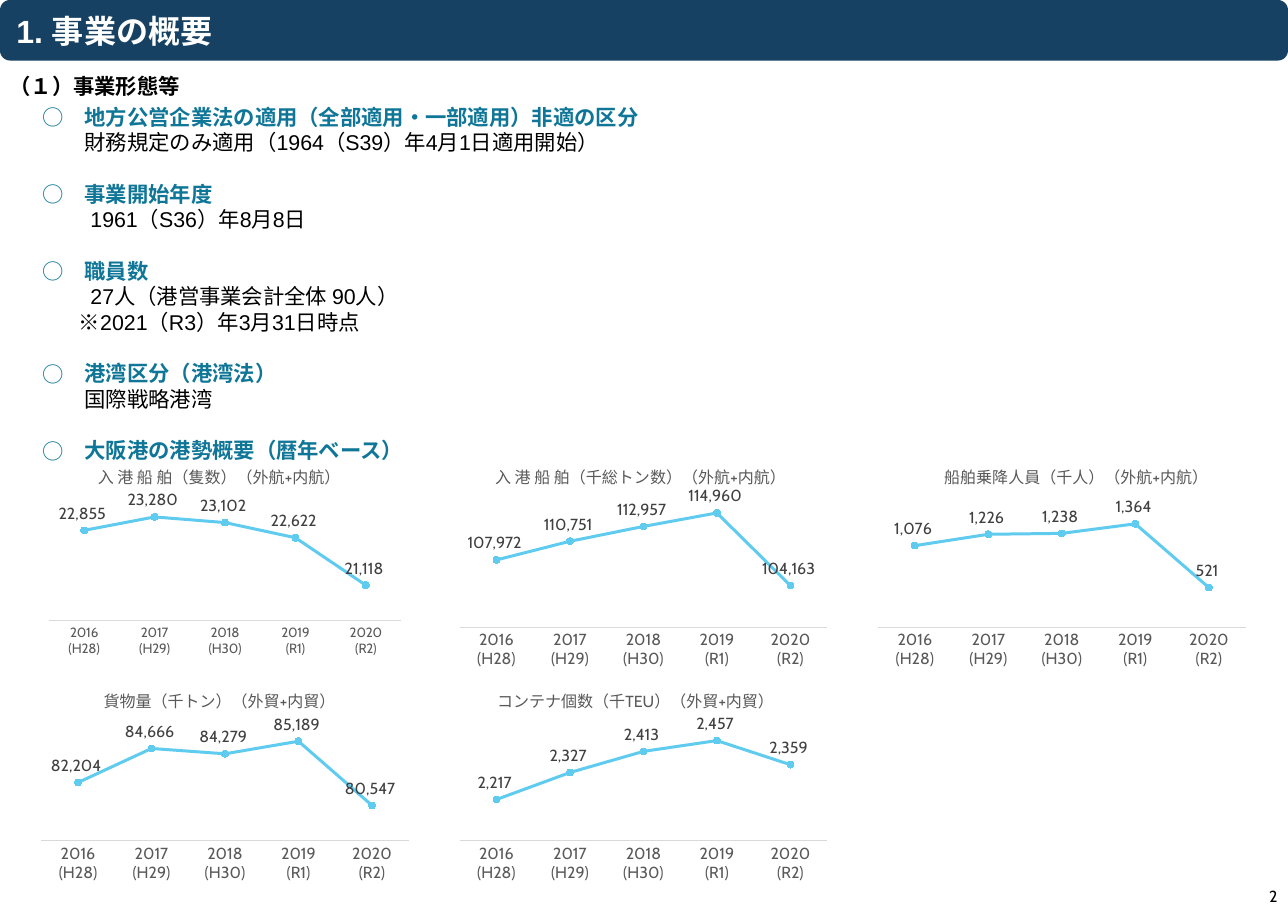
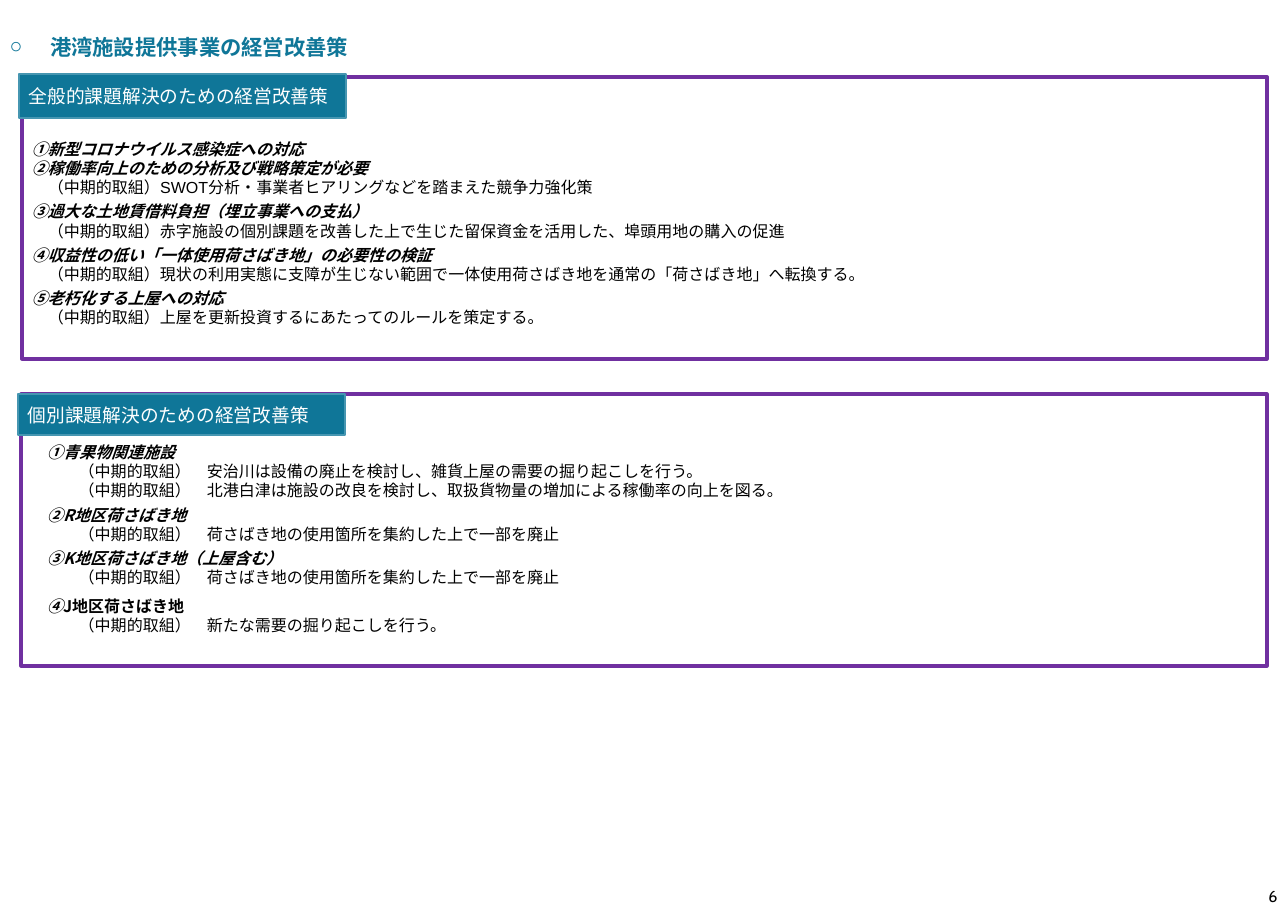
from dataclasses import dataclass

from lxml.etree import SubElement
from pptx import Presentation
from pptx.chart.data import CategoryChartData
from pptx.dml.color import RGBColor
from pptx.enum.chart import XL_CHART_TYPE as ChartType
from pptx.enum.chart import XL_LABEL_POSITION as LabelPosition
from pptx.enum.chart import XL_MARKER_STYLE as MarkerStyle
from pptx.enum.chart import XL_TICK_MARK as TickMark
from pptx.enum.shapes import MSO_SHAPE as Preset
from pptx.enum.text import MSO_ANCHOR as Anchor
from pptx.enum.text import MSO_AUTO_SIZE as AutoSize
from pptx.enum.text import PP_ALIGN as Align
from pptx.oxml import parse_xml
from pptx.oxml.ns import nsdecls, qn
from pptx.util import Inches, Pt

WIDTH, HEIGHT = 13.39, 9.45
NAVY, TEAL, TEAL_EDGE, PURPLE = "174162", "0F7698", "4696B1", "7030A0"
SKY, GREY, DARK_GREY, PALE_GREY = "5FCBEF", "595959", "404040", "D9D9D9"
BLACK, WHITE = "000000", "FFFFFF"
LATIN, BODY, JAPANESE = "Arial", "Cabin", "Noto Sans CJK JP"
NUMBER_FORMAT = r"#,##0_);[Red]\(#,##0\)"
YEARS = ["2016\n(H28)", "2017\n(H29)", "2018\n(H30)", "2019\n(R1)", "2020\n(R2)"]


@dataclass
class Box:
    """A region in inches."""
    left: float
    top: float
    width: float
    height: float

    def emu(self):
        return [Inches(n) for n in (self.left, self.top, self.width, self.height)]


TITLE_BAND = Box(0, 0, WIDTH, HEIGHT / 15)
PAGE_NUMBER = Box(WIDTH - 0.76, HEIGHT - 0.27, 0.75, 0.27)
CHART_COLUMNS = [0.35 + 4.35 * column for column in range(3)]
CHART_ROWS = [4.77, 7.1]
CHART_WIDTH = 3.98
CHART_TITLE_TOP = 0.005

FACTS = [  # heading, then (indent, mark, text) for each line below it
    ("地方公営企業法の適用（全部適用・一部適用）非適の区分",
     [(0.44, "", "財務規定のみ適用（1964（S39）年4月1日適用開始）")]),
    ("事業開始年度", [(0.5, "", "1961（S36）年8月8日")]),
    ("職員数", [(0.5, "", "27人（港営事業会計全体 90人）"),
              (0.38, "※", "2021（R3）年3月31日時点")]),
    ("港湾区分（港湾法）", [(0.44, "", "国際戦略港湾")]),
    ("大阪港の港勢概要（暦年ベース）", []),
]

CHARTS = [  # column, row, title, left share of the title, axis range, values
    (0, 0, "入 港 船 舶（隻数）（外航+内航）", 0.16, (20000, 23500),
     (22855, 23280, 23102, 22622, 21118)),
    (1, 0, "入 港 船 舶（千総トン数）（外航+内航）", 0.105, (98000, 116000),
     (107972, 110751, 112957, 114960, 104163)),
    (0, 1, "貨物量（千トン）（外貿+内貿）", 0.175, (78000, 86000),
     (82204, 84666, 84279, 85189, 80547)),
    (1, 1, "コンテナ個数（千TEU）（外貿+内貿）", 0.11, (2050, 2500),
     (2217, 2327, 2413, 2457, 2359)),
    (2, 0, "船舶乗降人員（千人）（外航+内航）", 0.185, (0, 1600),
     (1076, 1226, 1238, 1364, 521)),
]

MID_TERM = "（中期的取組）"
GENERAL_MEASURES = [  # gap above, marker, heading, heading is italic, details
    (0, "①", "新型コロナウイルス感染症への対応", True, []),
    (0, "②", "稼働率向上のための分析及び戦略策定が必要", True,
     ["SWOT分析・事業者ヒアリングなどを踏まえた競争力強化策"]),
    (3.6, "③", "過大な土地賃借料負担（埋立事業への支払）", True,
     ["赤字施設の個別課題を改善した上で生じた留保資金を活用した、埠頭用地の購入の促進"]),
    (3.6, "④", "収益性の低い「一体使用荷さばき地」の必要性の検証", True,
     ["現状の利用実態に支障が生じない範囲で一体使用荷さばき地を通常の「荷さばき地」へ転換する。"]),
    (3.6, "⑤", "老朽化する上屋への対応", True,
     ["上屋を更新投資するにあたってのルールを策定する。"]),
]
SITE_MEASURES = [
    (0, "①", "青果物関連施設", True,
     ["　安治川は設備の廃止を検討し、雑貨上屋の需要の掘り起こしを行う。",
      "　北港白津は施設の改良を検討し、取扱貨物量の増加による稼働率の向上を図る。"]),
    (3.6, "②", "R地区荷さばき地", True, ["　荷さばき地の使用箇所を集約した上で一部を廃止"]),
    (3.6, "③", "K地区荷さばき地（上屋含む）", True,
     ["　荷さばき地の使用箇所を集約した上で一部を廃止"]),
    (7.2, "④", "J地区荷さばき地", False, ["　新たな需要の掘り起こしを行う。"]),
]


def color(hex_text):
    return RGBColor.from_string(hex_text)


def style_font(font, size, hex_text, name=BODY, bold=False, italic=False):
    font.size, font.name = Pt(size), name
    font.bold, font.italic = bold, italic
    font.color.rgb = color(hex_text)


def add_run(paragraph, text, size, hex_text=BLACK, name=BODY, bold=False, italic=False):
    run = paragraph.add_run()
    run.text = text
    style_font(run.font, size, hex_text, name, bold, italic)
    SubElement(run.font._element, qn("a:ea")).set("typeface", JAPANESE)


def set_up_frame(shape, anchor=Anchor.TOP, left=0.1, top=0.05):
    """Wrap the text, fix the frame and return its first paragraph."""
    frame = shape.text_frame
    frame.word_wrap, frame.auto_size = True, AutoSize.NONE
    frame.vertical_anchor = anchor
    frame.margin_left = frame.margin_right = Inches(left)
    frame.margin_top, frame.margin_bottom = Inches(top), Inches(0.05)
    return frame.paragraphs[0]


def set_up_paragraph(paragraph, size, align=Align.LEFT, gap=0, indent=0, bullet_font=None):
    """Set a line 1.2 times the text size, with a hanging circle bullet if asked."""
    paragraph.alignment = align
    paragraph.line_spacing = Pt(size * 1.2)
    paragraph.space_before, paragraph.space_after = Pt(gap), Pt(0)
    properties = paragraph._p.get_or_add_pPr()
    properties.set("marL", str(Inches(indent)))
    properties.set("indent", str(-Inches(indent) if bullet_font else 0))
    if bullet_font:
        SubElement(properties, qn("a:buFont")).set("typeface", bullet_font)
        SubElement(properties, qn("a:buChar")).set("char", "○")
    else:
        SubElement(properties, qn("a:buNone"))


def paragraphs_of(frame):
    """Yield the first paragraph, then new ones."""
    yield frame.paragraphs[0]
    while True:
        yield frame.add_paragraph()


def move(shape, box):
    shape.left, shape.top, shape.width, shape.height = box.emu()


def add_block(slide, box, preset=Preset.RECTANGLE, fill=None, line=None, line_width=0):
    shape = slide.shapes.add_shape(preset, *box.emu())
    shape.shadow.inherit = False
    if fill:
        shape.fill.solid()
        shape.fill.fore_color.rgb = color(fill)
    else:
        shape.fill.background()
    if line:
        shape.line.color.rgb = color(line)
        shape.line.width = Pt(line_width)
    else:
        shape.line.fill.background()
    return shape


def add_text(slide, box, text, size, align=Align.LEFT, bold=False, anchor=Anchor.TOP):
    paragraph = set_up_frame(slide.shapes.add_textbox(*box.emu()), anchor)
    set_up_paragraph(paragraph, size, align)
    add_run(paragraph, text, size, bold=bold)


def add_page_number(slide, number):
    add_text(slide, PAGE_NUMBER, number, 12, Align.RIGHT, anchor=Anchor.MIDDLE)


def add_title_band(slide, text):
    """Draw the rounded band and bring the title in front of it."""
    band = add_block(slide, TITLE_BAND, Preset.ROUNDED_RECTANGLE, NAVY)
    title = slide.shapes.title
    band._element.addnext(title._element)
    move(title, TITLE_BAND)
    paragraph = set_up_frame(title, Anchor.MIDDLE, left=0.17)
    set_up_paragraph(paragraph, 24)
    add_run(paragraph, text, 24, WHITE, LATIN, bold=True)


def format_fact_list(body, box):
    move(body, box)
    set_up_frame(body)
    paragraphs = paragraphs_of(body.text_frame)
    for index, (heading, details) in enumerate(FACTS):
        paragraph = next(paragraphs)
        set_up_paragraph(paragraph, 16, gap=19.2 if index else 0, indent=0.44,
                         bullet_font=JAPANESE)
        add_run(paragraph, heading, 16, TEAL, bold=True)
        for indent, mark, text in details:
            paragraph = next(paragraphs)
            set_up_paragraph(paragraph, 16, indent=indent)
            if mark:
                add_run(paragraph, mark, 16, name=JAPANESE)
            add_run(paragraph, text, 16, name=LATIN)


def set_layout(parent, position, **shares):
    """Fix a chart part at shares (x, y, w, h) of the chart's size."""
    for old in parent.findall(qn("c:layout")):
        parent.remove(old)
    layout = parse_xml(f'<c:layout {nsdecls("c")}><c:manualLayout/></c:layout>')
    manual = layout[0]
    if "w" in shares:
        SubElement(manual, qn("c:layoutTarget")).set("val", "inner")
    for axis in "xy":
        SubElement(manual, qn(f"c:{axis}Mode")).set("val", "edge")
    for key, share in shares.items():
        SubElement(manual, qn(f"c:{key}")).set("val", f"{share:.3f}")
    parent.insert(position, layout)


def add_line_chart(slide, box, title, title_left, limits, values, label_size, plot):
    data = CategoryChartData(number_format=NUMBER_FORMAT)
    data.categories = YEARS
    data.add_series("Series 1", values)
    chart = slide.shapes.add_chart(ChartType.LINE_MARKERS, *box.emu(), data).chart
    style_font(chart.font, 10, BLACK)
    chart.has_legend = False

    chart.has_title = True
    run = chart.chart_title.text_frame.paragraphs[0].add_run()
    run.text = title
    style_font(run.font, 12, GREY)
    chart.chart_title.include_in_layout = False
    set_layout(chart.chart_title._element, 1, x=title_left, y=CHART_TITLE_TOP)
    set_layout(chart._chartSpace.chart.plotArea, 0, **plot)

    years = chart.category_axis
    years.major_tick_mark = years.minor_tick_mark = TickMark.NONE
    style_font(years.tick_labels.font, label_size, GREY)
    years.format.line.color.rgb = color(PALE_GREY)
    years.format.line.width = Pt(0.75)
    amounts = chart.value_axis
    amounts.visible = amounts.has_major_gridlines = False
    amounts.minimum_scale, amounts.maximum_scale = limits

    chart.plots[0].vary_by_categories = False
    series = chart.plots[0].series[0]
    series.smooth = False
    series.format.line.color.rgb = color(SKY)
    series.format.line.width = Pt(2.25)
    series.marker.style, series.marker.size = MarkerStyle.CIRCLE, 5
    series.marker.format.fill.solid()
    series.marker.format.fill.fore_color.rgb = color(SKY)
    series.marker.format.line.color.rgb = color(SKY)
    labels = series.data_labels
    labels.show_value, labels.position = True, LabelPosition.ABOVE
    labels.number_format, labels.number_format_is_linked = NUMBER_FORMAT, False
    style_font(labels.font, 12, DARK_GREY)


def add_chart_grid(slide):
    for column, row, *content in CHARTS:
        first = column == row == 0
        height = 2.24 if row == 0 and not first else 2.13
        margin = 0.49 / height
        plot = (dict(x=0.04, y=0.25, w=0.92, h=0.54) if first
                else dict(x=0.02, y=margin, w=0.96, h=1 - 2 * margin))
        box = Box(CHART_COLUMNS[column], CHART_ROWS[row], CHART_WIDTH, height)
        add_line_chart(slide, box, *content, 10 if first else 12, plot)


def add_measure_panel(slide, box, tab_height, tab_rise, label, text_top, indents, measures):
    """Draw a framed list with a label tab over its top left corner."""
    panel = add_block(slide, box, line=PURPLE, line_width=3)
    set_up_frame(panel, top=text_top)
    paragraphs = paragraphs_of(panel.text_frame)
    for gap, marker, heading, italic, details in measures:
        paragraph = next(paragraphs)
        set_up_paragraph(paragraph, 12, Align.JUSTIFY, gap, indents[0])
        add_run(paragraph, marker, 12, name=JAPANESE, bold=True, italic=True)
        add_run(paragraph, heading, 12, name=JAPANESE, bold=True, italic=italic)
        for detail in details:
            paragraph = next(paragraphs)
            set_up_paragraph(paragraph, 12, Align.JUSTIFY, indent=indents[1])
            add_run(paragraph, MID_TERM + detail, 12, name=LATIN)

    tab_box = Box(box.left - 0.03, box.top - tab_rise, 3.4, tab_height)
    tab = add_block(slide, tab_box, fill=TEAL, line=TEAL_EDGE, line_width=1.5)
    paragraph = set_up_frame(tab, Anchor.MIDDLE)
    set_up_paragraph(paragraph, 14)
    add_run(paragraph, label, 14, WHITE)


def build_overview(presentation):
    slide = presentation.slides.add_slide(presentation.slide_layouts[1])
    add_title_band(slide, "1. 事業の概要")
    add_text(slide, Box(0, 0.71, 2.29, 0.37), "（１）事業形態等", 16, bold=True)
    format_fact_list(slide.placeholders[1], Box(0.34, 1.03, 12.09, 3.87))
    add_chart_grid(slide)
    add_page_number(slide, "2")


def build_measures(presentation):
    slide = presentation.slides.add_slide(presentation.slide_layouts[5])
    title = slide.shapes.title
    move(title, Box(0, 0.3, WIDTH, 0.37))
    paragraph = set_up_frame(title)
    set_up_paragraph(paragraph, 16, indent=0.42, bullet_font=LATIN)
    add_run(paragraph, "港湾施設提供事業の経営改善策", 16, TEAL, bold=True)
    add_measure_panel(slide, Box(0.23, 0.8, 12.94, 2.93), 0.46, 0.03,
                      "全般的課題解決のための経営改善策", 0.65, (0, 0.17), GENERAL_MEASURES)
    add_measure_panel(slide, Box(0.22, 4.1, 12.95, 2.82), 0.42, 0,
                      "個別課題解決のための経営改善策", 0.5, (0.17, 0.5), SITE_MEASURES)
    add_page_number(slide, "6")


def main():
    presentation = Presentation()
    presentation.slide_width, presentation.slide_height = Inches(WIDTH), Inches(HEIGHT)
    build_overview(presentation)
    build_measures(presentation)
    presentation.save("out.pptx")


if __name__ == "__main__":
    main()
